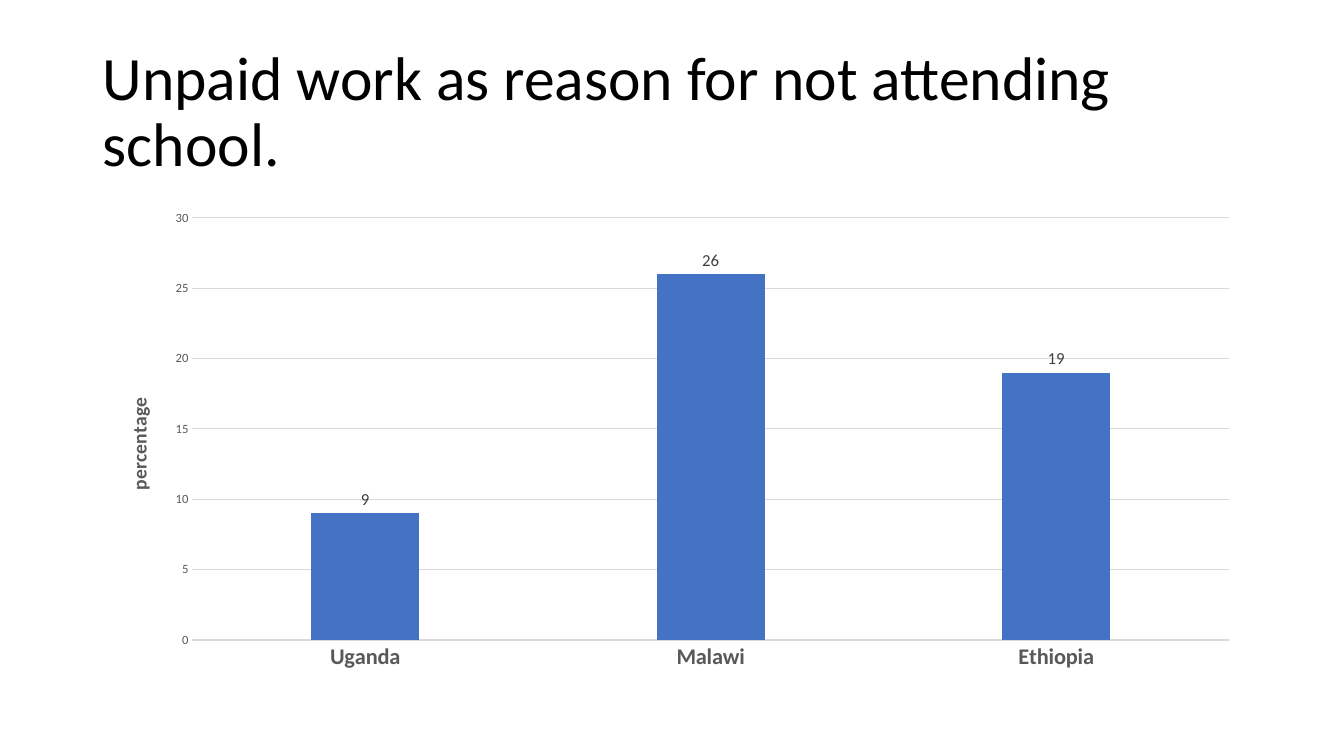
from lxml import etree
from pptx import Presentation
from pptx.chart.data import CategoryChartData
from pptx.dml.color import RGBColor
from pptx.enum.chart import XL_CHART_TYPE, XL_LABEL_POSITION, XL_TICK_MARK
from pptx.enum.text import MSO_ANCHOR
from pptx.oxml.ns import qn
from pptx.util import Inches, Pt

COLUMNS = XL_CHART_TYPE.COLUMN_CLUSTERED
OUTSIDE_END = XL_LABEL_POSITION.OUTSIDE_END
NO_TICK = XL_TICK_MARK.NONE
MIDDLE = MSO_ANCHOR.MIDDLE

TITLE = "Unpaid work as reason for not attending school."
AXIS_TITLE = "percentage"
SHARES = {"Uganda": 9, "Malawi": 26, "Ethiopia": 19}
FONT = "Calibri"
BLACK, GREY, DARK_GREY, RULE, BLUE = "000000", "595959", "404040", "D9D9D9", "4472C4"

WIDTH, HEIGHT = 13.33, 7.5
MARGIN = 0.92
CONTENT_WIDTH = 11.5
TITLE_TOP, TITLE_HEIGHT = 0.4, 1.45
CHART_TOP, CHART_HEIGHT = 2, 4.76
# Shares of the chart's size
PLOT_AREA = {"x": 0.086, "y": 0.034, "w": 0.894, "h": 0.88}
AXIS_TITLE_SPOT = {"x": 0.025, "y": 0.4}


def rgb(color):
    return RGBColor.from_string(color)


def style(font, size, color, bold=False):
    font.name, font.size, font.bold = FONT, Pt(size), bold
    font.color.rgb = rgb(color)


def rule(line):
    line.color.rgb = rgb(RULE)
    line.width = Pt(0.75)


def set_layout(parent, index, shares, inner=False):
    """Place a chart part by shares of the chart's width and height."""
    for old in parent.findall(qn("c:layout")):
        parent.remove(old)
    layout = etree.Element(qn("c:layout"))
    parent.insert(index, layout)
    manual = etree.SubElement(layout, qn("c:manualLayout"))
    if inner:
        etree.SubElement(manual, qn("c:layoutTarget"), val="inner")
    for key in ("x", "y"):
        etree.SubElement(manual, qn(f"c:{key}Mode"), val="edge")
    for key, share in shares.items():
        etree.SubElement(manual, qn(f"c:{key}"), val=str(share))


def add_title(s):
    box = s.shapes.add_textbox(Inches(MARGIN), Inches(TITLE_TOP),
                               Inches(CONTENT_WIDTH), Inches(TITLE_HEIGHT))
    tf = box.text_frame
    tf.word_wrap = True
    tf.vertical_anchor = MIDDLE
    p = tf.paragraphs[0]
    p.text = TITLE
    p.line_spacing = 0.9
    style(p.font, 44, BLACK)


def add_share_chart(s):
    data = CategoryChartData()
    data.categories = list(SHARES)
    data.add_series("Series 1", list(SHARES.values()))
    chart = s.shapes.add_chart(COLUMNS, Inches(MARGIN), Inches(CHART_TOP),
                               Inches(CONTENT_WIDTH), Inches(CHART_HEIGHT), data).chart
    chart.has_legend = False
    chart.has_title = False
    style(chart.font, 10, BLACK)

    countries = chart.category_axis
    countries.major_tick_mark = NO_TICK
    style(countries.tick_labels.font, 16, GREY, bold=True)
    rule(countries.format.line)

    percent = chart.value_axis
    percent.minimum_scale, percent.maximum_scale, percent.major_unit = 0, 30, 5
    percent.major_tick_mark = NO_TICK
    percent.format.line.fill.background()
    style(percent.tick_labels.font, 9, GREY)
    rule(percent.major_gridlines.format.line)
    p = percent.axis_title.text_frame.paragraphs[0]
    p.text = AXIS_TITLE
    style(p.font, 14, GREY, bold=True)

    plot = chart.plots[0]
    plot.gap_width, plot.overlap = 219, -27
    plot.vary_by_categories = False
    series = plot.series[0]
    series.format.fill.solid()
    series.format.fill.fore_color.rgb = rgb(BLUE)
    labels = series.data_labels
    labels.show_value = True
    labels.position = OUTSIDE_END
    style(labels.font, 12, DARK_GREY)

    set_layout(chart.element.find(".//" + qn("c:plotArea")), 0, PLOT_AREA, inner=True)
    set_layout(chart.element.find(".//" + qn("c:valAx") + "/" + qn("c:title")),
               1, AXIS_TITLE_SPOT)


def main():
    prs = Presentation()
    prs.slide_width, prs.slide_height = Inches(WIDTH), Inches(HEIGHT)
    s = prs.slides.add_slide(prs.slide_layouts[6])
    add_title(s)
    add_share_chart(s)
    prs.save("out.pptx")


if __name__ == "__main__":
    main()
